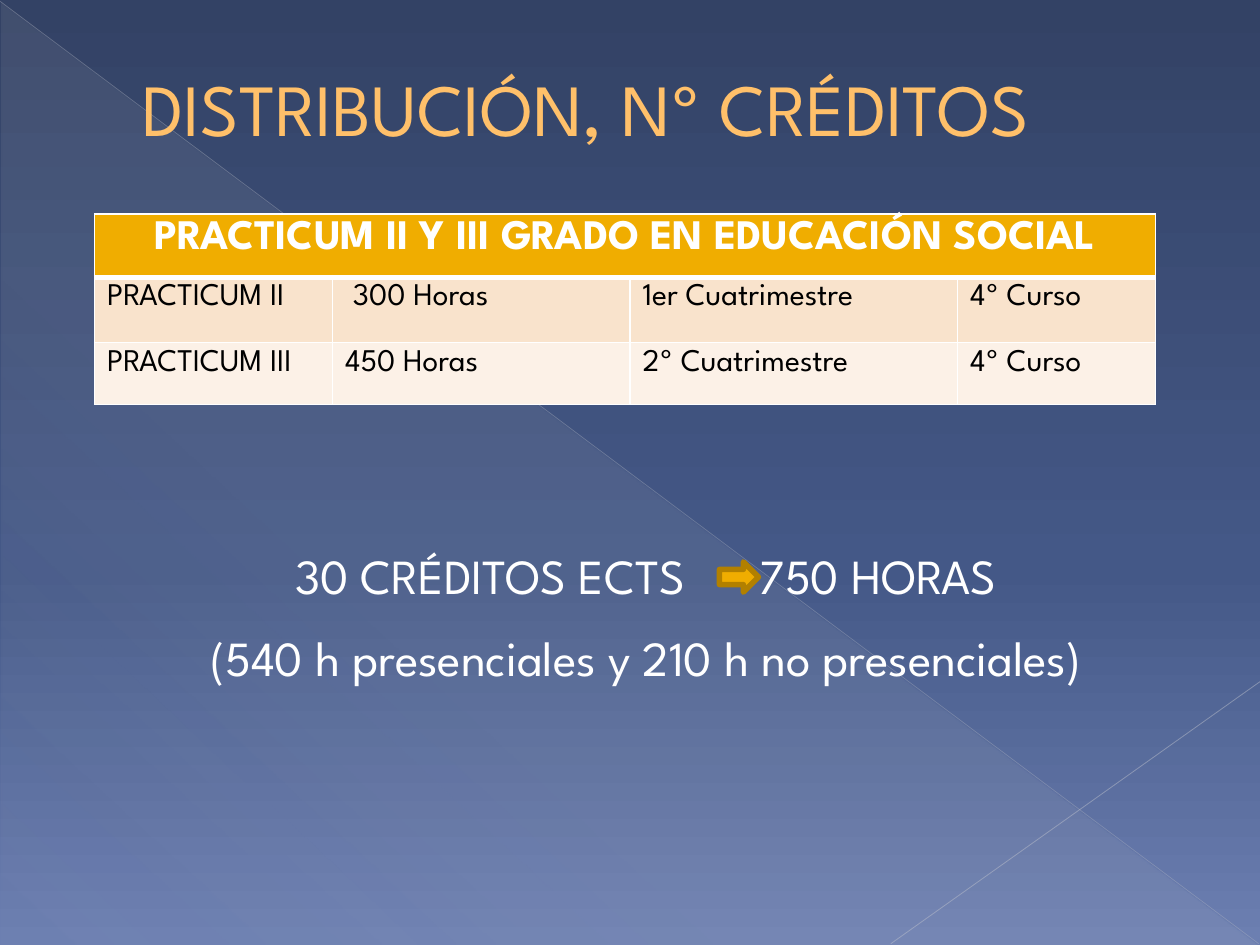
from lxml import etree
from pptx import Presentation
from pptx import util as u
from pptx.dml.color import RGBColor
from pptx.enum import shapes, text
from pptx.oxml.ns import qn

FONT = "League Spartan"
COLORS = {
    "sky_top": "334265", "sky_middle": "445887", "sky_bottom": "6C7FB1",
    "veil": "D4D4D6", "long_ray": "B9BDC8", "short_ray": "C1C4CE",
    "title": "FFC06A", "white": "FFFFFF", "black": "000000",
    "accent": "F0AD00", "accent_edge": "B28000",
    "band_dark": "F9E3CC", "band_light": "FCF1E7",
}
HEADING = "PRACTICUM II Y III GRADO EN EDUCACIÓN SOCIAL"
COURSES = [
    ("PRACTICUM II", " 300 Horas", "1er Cuatrimestre", "4º Curso"),
    ("PRACTICUM III", "450 Horas", "2º Cuatrimestre", "4º Curso"),
]
COLUMN_WIDTHS = [1.89, 2.36, 2.6, 1.57]
ROW_HEIGHTS = [0.47, 0.52, 0.49]


def rgb(name):
    return RGBColor.from_string(COLORS[name])


def box(left, top, width, height):
    return [u.Inches(value) for value in (left, top, width, height)]


def set_alpha(color_element, percent):
    etree.SubElement(color_element, qn("a:alpha"), val=str(percent * 1000))


def fill_gradient(fill, owner, stops, angle):
    """Fill with (position, colour, opacity) stops at a clockwise angle."""
    fill.gradient()
    gradient = next(owner.iter(qn("a:gradFill")))
    stop_list = gradient.find(qn("a:gsLst"))
    for old_stop in list(stop_list):
        stop_list.remove(old_stop)
    for position, color, opacity in stops:
        stop = etree.SubElement(stop_list, qn("a:gs"), pos=str(position * 1000))
        color_element = etree.SubElement(stop, qn("a:srgbClr"), val=COLORS[color])
        if opacity < 100:
            set_alpha(color_element, opacity)
    gradient.find(qn("a:lin")).set("ang", str(angle * 60000))


def add_run(paragraph, wording, size, color, bold=False):
    run = paragraph.add_run()
    run.text = wording
    run.font.name = FONT
    run.font.size = u.Pt(size)
    run.font.bold = bold
    run.font.color.rgb = rgb(color)
    return run


def add_text_frame(slide, place, anchor):
    frame = slide.shapes.add_textbox(*box(*place)).text_frame
    frame.word_wrap = True
    frame.vertical_anchor = anchor
    return frame


def add_ray(slide, start, end, color, width, opacity):
    ray = slide.shapes.add_connector(
        shapes.MSO_CONNECTOR.STRAIGHT, *box(*start, *end))
    ray.line.color.rgb = rgb(color)
    ray.line.width = u.Pt(width)
    set_alpha(next(ray.element.iter(qn("a:srgbClr"))), opacity)
    etree.SubElement(ray.element.spPr, qn("a:effectLst"))


def add_backdrop(slide):
    fill_gradient(
        slide.background.fill, slide.element,
        [(0, "sky_top", 100), (60, "sky_middle", 100), (100, "sky_bottom", 100)], 90)
    veil = slide.shapes.add_shape(
        shapes.MSO_SHAPE.RIGHT_TRIANGLE, *box(0.01, 0.02, 9.98, 7.48))
    veil.shadow.inherit = False
    veil.line.fill.background()
    fill_gradient(
        veil.fill, veil.element,
        [(0, "veil", 10), (70, "veil", 8), (100, "veil", 1)], 133)
    add_ray(slide, (0, 0.01), (9.99, 7.49), "long_ray", 0.39, 35)
    add_ray(slide, (10, 5.41), (7.07, 7.49), "short_ray", 0.47, 45)


def add_title(slide):
    frame = add_text_frame(slide, (0.5, 0.34, 9, 1.02), text.MSO_ANCHOR.MIDDLE)
    frame.margin_left = u.Inches(0.63)
    add_run(frame.paragraphs[0], "DISTRIBUCIÓN, Nº CRÉDITOS", 42, "title")


def add_credits(slide):
    frame = add_text_frame(slide, (0.66, 4.28, 8.93, 1.1), text.MSO_ANCHOR.TOP)
    total = frame.paragraphs[0]
    add_run(total, "30 CRÉDITOS ECTS", 28, "white")
    arrow_gap = add_run(total, " ", 28, "white")
    arrow_gap.font._element.set("spc", "3600")
    add_run(total, "750 HORAS", 28, "white")
    split = frame.add_paragraph()
    split.space_before = u.Pt(13)
    add_run(split, "(540 h presenciales y 210 h no presenciales)", 28, "white")
    for paragraph in frame.paragraphs:
        paragraph.alignment = text.PP_ALIGN.CENTER


def style_cell(cell, fill, bottom_width=1, top_width=1):
    cell.fill.solid()
    cell.fill.fore_color.rgb = rgb(fill)
    properties = cell._tc.get_or_add_tcPr()
    widths = {"lnL": 1, "lnR": 1, "lnT": top_width, "lnB": bottom_width}
    for index, (side, width) in enumerate(widths.items()):
        border = etree.Element(qn(f"a:{side}"), w=str(u.Pt(width)))
        solid = etree.SubElement(border, qn("a:solidFill"))
        etree.SubElement(solid, qn("a:srgbClr"), val=COLORS["white"])
        properties.insert(index, border)


def add_course_table(slide):
    table = slide.shapes.add_table(
        len(ROW_HEIGHTS), len(COLUMN_WIDTHS), *box(0.75, 1.7, 8.43, 1.48)).table
    for column, width in zip(table.columns, COLUMN_WIDTHS):
        column.width = u.Inches(width)
    for row, height in zip(table.rows, ROW_HEIGHTS):
        row.height = u.Inches(height)

    heading = table.cell(0, 0)
    heading.merge(table.cell(0, len(COLUMN_WIDTHS) - 1))
    for cell in table.rows[0].cells:
        style_cell(cell, "accent", bottom_width=3)
    paragraph = heading.text_frame.paragraphs[0]
    paragraph.alignment = text.PP_ALIGN.CENTER
    add_run(paragraph, HEADING, 24, "white", bold=True)

    for r, course in enumerate(COURSES, start=1):
        for c, wording in enumerate(course):
            cell = table.cell(r, c)
            style_cell(cell, "band_dark" if r % 2 else "band_light",
                       top_width=3 if r == 1 else 1)
            add_run(cell.text_frame.paragraphs[0], wording, 18, "black")


def add_arrow(slide):
    arrow = slide.shapes.add_shape(
        shapes.MSO_SHAPE.RIGHT_ARROW, *box(5.71, 4.46, 0.31, 0.24))
    arrow.shadow.inherit = False
    arrow.fill.solid()
    arrow.fill.fore_color.rgb = rgb("accent")
    arrow.line.color.rgb = rgb("accent_edge")
    arrow.line.width = u.Pt(3.15)


def main():
    deck = Presentation()
    deck.slide_width, deck.slide_height = u.Inches(10), u.Inches(7.5)
    slide = deck.slides.add_slide(deck.slide_layouts[6])
    add_backdrop(slide)
    add_title(slide)
    add_credits(slide)
    add_course_table(slide)
    add_arrow(slide)
    deck.save("out.pptx")


if __name__ == "__main__":
    main()
